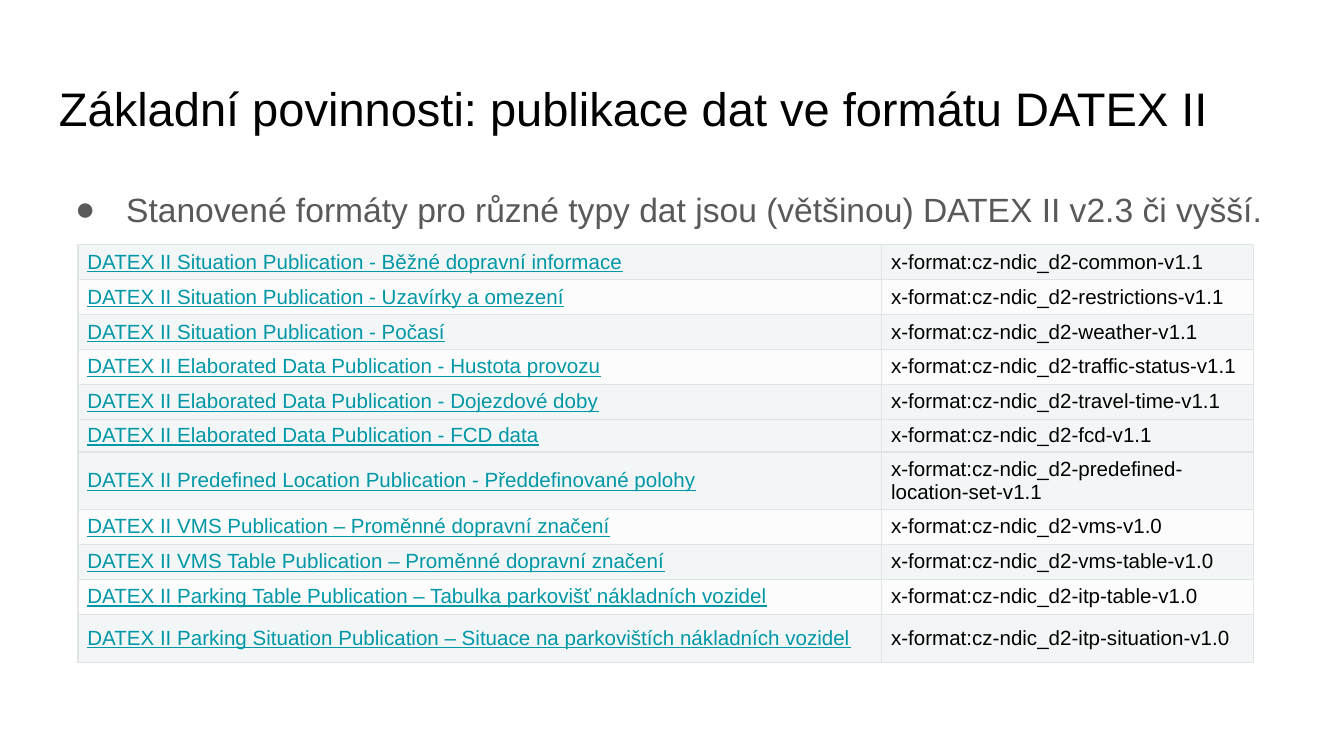
from lxml.etree import SubElement
from pptx import Presentation
from pptx.dml.color import RGBColor as Color
from pptx.enum.text import MSO_ANCHOR as Anchor
from pptx.oxml.ns import qn
from pptx.util import Inches, Pt

FONT = "Arial"
COLORS = {
    "title": "000000",
    "body": "595959",
    "link": "0097A7",
    "format": "000000",
    "border": "E1E4E5",
    "shaded": "F3F6F6",
    "light": "FCFCFC",
}

TITLE = "Základní povinnosti: publikace dat ve formátu DATEX II"
BULLET = "Stanovené formáty pro různé typy dat jsou (většinou) DATEX II v2.3 či vyšší."

# Publication, format suffix, row height
ROWS = [
    ("Situation Publication - Běžné dopravní informace", "common-v1.1", 0.26),
    ("Situation Publication - Uzavírky a omezení", "restrictions-v1.1", 0.26),
    ("Situation Publication - Počasí", "weather-v1.1", 0.26),
    ("Elaborated Data Publication - Hustota provozu", "traffic-status-v1.1", 0.26),
    ("Elaborated Data Publication - Dojezdové doby", "travel-time-v1.1", 0.26),
    ("Elaborated Data Publication - FCD data", "fcd-v1.1", 0.17),
    ("Predefined Location Publication - Předdefinované polohy",
     "predefined-location-set-v1.1", 0.17),
    ("VMS Publication – Proměnné dopravní značení", "vms-v1.0", 0.26),
    ("VMS Table Publication – Proměnné dopravní značení", "vms-table-v1.0", 0.26),
    ("Parking Table Publication – Tabulka parkovišť nákladních vozidel",
     "itp-table-v1.0", 0.26),
    ("Parking Situation Publication – Situace na parkovištích nákladních vozidel",
     "itp-situation-v1.0", 0.36),
]
LIGHT_ROWS = {1, 3, 7, 9}
COLUMN_WIDTHS = (5.98, 2.77)
TABLE_HEIGHT = Inches(3.14)


def add_span(para, text, size, color, underline=False):
    span = para.add_run()
    span.text = text
    span.font.name = FONT
    span.font.size = Pt(size)
    span.font.color.rgb = Color.from_string(COLORS[color])
    span.font.underline = underline


def add_text(page, top, height, text, size, color):
    box = page.shapes.add_textbox(Inches(0.34), Inches(top), Inches(9.32), Inches(height))
    frame = box.text_frame
    frame.word_wrap = True
    frame.margin_left = frame.margin_right = Inches(0.1)
    frame.margin_top = frame.margin_bottom = Inches(0.1)
    para = frame.paragraphs[0]
    add_span(para, text, size, color)
    return para


def set_bullet(para, size, color):
    props = para._p.get_or_add_pPr()
    props.set("marL", str(Inches(0.5)))
    props.set("indent", str(Inches(-0.38)))
    bullet_color = SubElement(props, qn("a:buClr"))
    SubElement(bullet_color, qn("a:srgbClr")).set("val", COLORS[color])
    SubElement(props, qn("a:buSzPts")).set("val", str(size * 100))
    SubElement(props, qn("a:buFont")).set("typeface", FONT)
    SubElement(props, qn("a:buChar")).set("char", "●")


def set_borders(cell):
    props = cell._tc.get_or_add_tcPr()
    for side in ("a:lnL", "a:lnR", "a:lnT", "a:lnB"):
        line = SubElement(props, qn(side), w=str(Pt(0.75)))
        fill = SubElement(line, qn("a:solidFill"))
        SubElement(fill, qn("a:srgbClr")).set("val", COLORS["border"])


def fill_cell(cell, text, color, underline, background):
    set_borders(cell)
    cell.fill.solid()
    cell.fill.fore_color.rgb = Color.from_string(COLORS[background])
    cell.vertical_anchor = Anchor.MIDDLE
    cell.margin_left = cell.margin_right = Inches(0.07)
    cell.margin_top = cell.margin_bottom = Inches(0.03)
    add_span(cell.text_frame.paragraphs[0], text, 11, color, underline)


def add_format_table(page):
    frame = page.shapes.add_table(
        len(ROWS), len(COLUMN_WIDTHS), Inches(0.58), Inches(1.82),
        Inches(sum(COLUMN_WIDTHS)), TABLE_HEIGHT)
    table = frame.table
    table.first_row = table.horz_banding = False
    for column, width in zip(table.columns, COLUMN_WIDTHS):
        column.width = Inches(width)
    for index, (publication, suffix, row_height) in enumerate(ROWS):
        table.rows[index].height = Inches(row_height)
        background = "light" if index in LIGHT_ROWS else "shaded"
        fill_cell(table.cell(index, 0), f"DATEX II {publication}", "link", True, background)
        fill_cell(table.cell(index, 1), f"x-format:cz-ndic_d2-{suffix}", "format", False,
                  background)
    # Row heights reset the frame, so its height is set last
    frame.height = TABLE_HEIGHT


def main():
    deck = Presentation()
    deck.slide_width = Inches(10)
    deck.slide_height = deck.slide_width * 9 // 16
    page = deck.slides.add_slide(deck.slide_layouts[6])

    # Title
    add_text(page, 0.49, 0.63, TITLE, 25.2, "title")

    # Bullet point
    para = add_text(page, 1.26, 3.74, BULLET, 18, "body")
    para.line_spacing = 1.15
    set_bullet(para, 18, "body")

    # Table of publications and formats
    add_format_table(page)

    deck.save("out.pptx")


if __name__ == "__main__":
    main()
